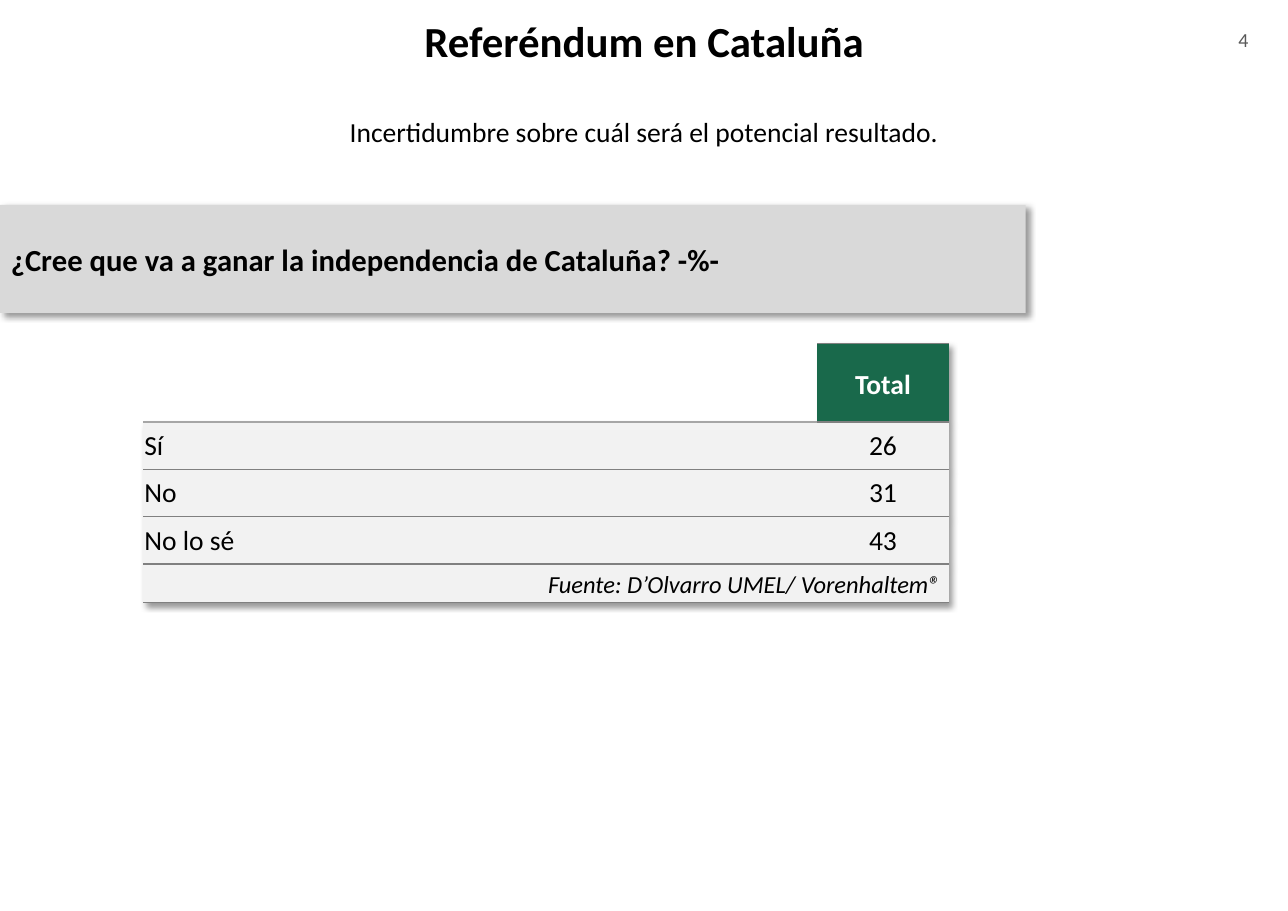
from lxml import etree
from pptx import Presentation
from pptx.dml.color import RGBColor
from pptx.enum.shapes import MSO_SHAPE
from pptx.enum.text import MSO_ANCHOR as ANCHOR, PP_ALIGN as AL
from pptx.oxml import parse_xml
from pptx.oxml.ns import nsdecls, qn
from pptx.util import Pt

PX = 9144
SHADOW = (
    f'<a:effectLst {nsdecls("a")}><a:outerShdw blurRad="50800" dist="38100" dir="2700000" '
    'algn="tl" rotWithShape="0"><a:srgbClr val="000000"><a:alpha val="40000"/>'
    '</a:srgbClr></a:outerShdw></a:effectLst>'
)


def rgb(color):
    return RGBColor.from_string(color)


def write(tf, text, align, size, color="000000", spacing=None, **fmt):
    tf.word_wrap = True
    p = tf.paragraphs[0]
    p.alignment = align
    if spacing:
        p.line_spacing = spacing
    r = p.add_run()
    r.text = text
    r.font.color.rgb = rgb(color)
    for name, value in {"name": "Calibri", "size": Pt(size), **fmt}.items():
        setattr(r.font, name, value)


prs = Presentation()
prs.slide_width, prs.slide_height = 1169 * PX, 827 * PX
s = prs.slides.add_slide(prs.slide_layouts[6])

texts = [
    ("4", (1084, 20, 89, 44), ANCHOR.TOP, {"size": 13, "color": "595959"}),
    ("Incertidumbre sobre cuál será el potencial resultado.", (0, 99, 1169, 40),
     ANCHOR.MIDDLE, {"size": 18}),
    ("Referéndum en Cataluña", (0, -10, 1169, 94), ANCHOR.MIDDLE, {"size": 28, "bold": True}),
]
for text, box, anchor, fmt in texts:
    tf = s.shapes.add_textbox(*(v * PX for v in box)).text_frame
    tf.vertical_anchor = anchor
    write(tf, text, AL.CENTER, **fmt)

widths = [612, 119]
heights = [71, 43, 43, 43, 35]
frame = s.shapes.add_table(5, 2, 130 * PX, 312 * PX, sum(widths) * PX, sum(heights) * PX)
table = frame.table
for col, width in zip(table.columns, widths):
    col.width = width * PX
for row, height in zip(table.rows, heights):
    row.height = height * PX
table.first_row = table.horz_banding = False
tblPr = table._tbl.tblPr
tblPr.find(qn("a:tableStyleId")).text = "{2D5ABB26-0587-4C30-8999-92F81FD0307C}"
tblPr.insert(0, parse_xml(SHADOW))

answers = [("Sí", "26"), ("No", "31"), ("No lo sé", "43")]
source = "Fuente: D’Olvarro UMEL/ Vorenhaltem®"
rows = [("", "Total"), *answers, (source, "")]
table.cell(4, 0).merge(table.cell(4, 1))

for i, row in enumerate(rows):
    for j, text in enumerate(row):
        cell = table.cell(i, j)
        cell.vertical_anchor = ANCHOR.MIDDLE
        is_answer = 0 < i < 4
        cell.margin_left = cell.margin_right = (1 if is_answer else 7) * PX
        cell.margin_top = (1 if is_answer else 0) * PX
        cell.margin_bottom = 0
        if (i, j) == (0, 0):
            cell.fill.background()
        else:
            cell.fill.solid()
            cell.fill.fore_color.rgb = rgb("19694B" if i == 0 else "F2F2F2")
        if i == 0 and text:
            write(cell.text_frame, text, AL.CENTER, 18, "FFFFFF", 1.15, bold=True)
        elif is_answer:
            write(cell.text_frame, text, AL.CENTER if j else AL.LEFT, 18)
        elif text:
            write(cell.text_frame, text, AL.RIGHT, 16, spacing=1.15, italic=True)

        edges = {"a:lnT": "A6A6A6" if (i, j) == (1, 0) else "808080",
                 "a:lnB": "A6A6A6" if (i, j) == (0, 0) else "808080"}
        if (i, j) == (0, 0):
            del edges["a:lnT"]
        tcPr = cell._tc.get_or_add_tcPr()
        for k, (tag, color) in enumerate(edges.items()):
            ln = etree.Element(qn(tag), w=str(Pt(1)))
            fill = etree.SubElement(ln, qn("a:solidFill"))
            etree.SubElement(fill, qn("a:srgbClr"), val=color)
            tcPr.insert(k, ln)

question = s.shapes.add_shape(MSO_SHAPE.RECTANGLE, 0, 186 * PX, 931 * PX, 98 * PX)
question.fill.solid()
question.fill.fore_color.rgb = rgb("D9D9D9")
question.line.fill.background()
question._element.spPr.append(parse_xml(SHADOW))
question.text_frame.vertical_anchor = ANCHOR.MIDDLE
write(question.text_frame, "¿Cree que va a ganar la independencia de Cataluña? -%-", AL.LEFT, 20, bold=True)

prs.save("out.pptx")
